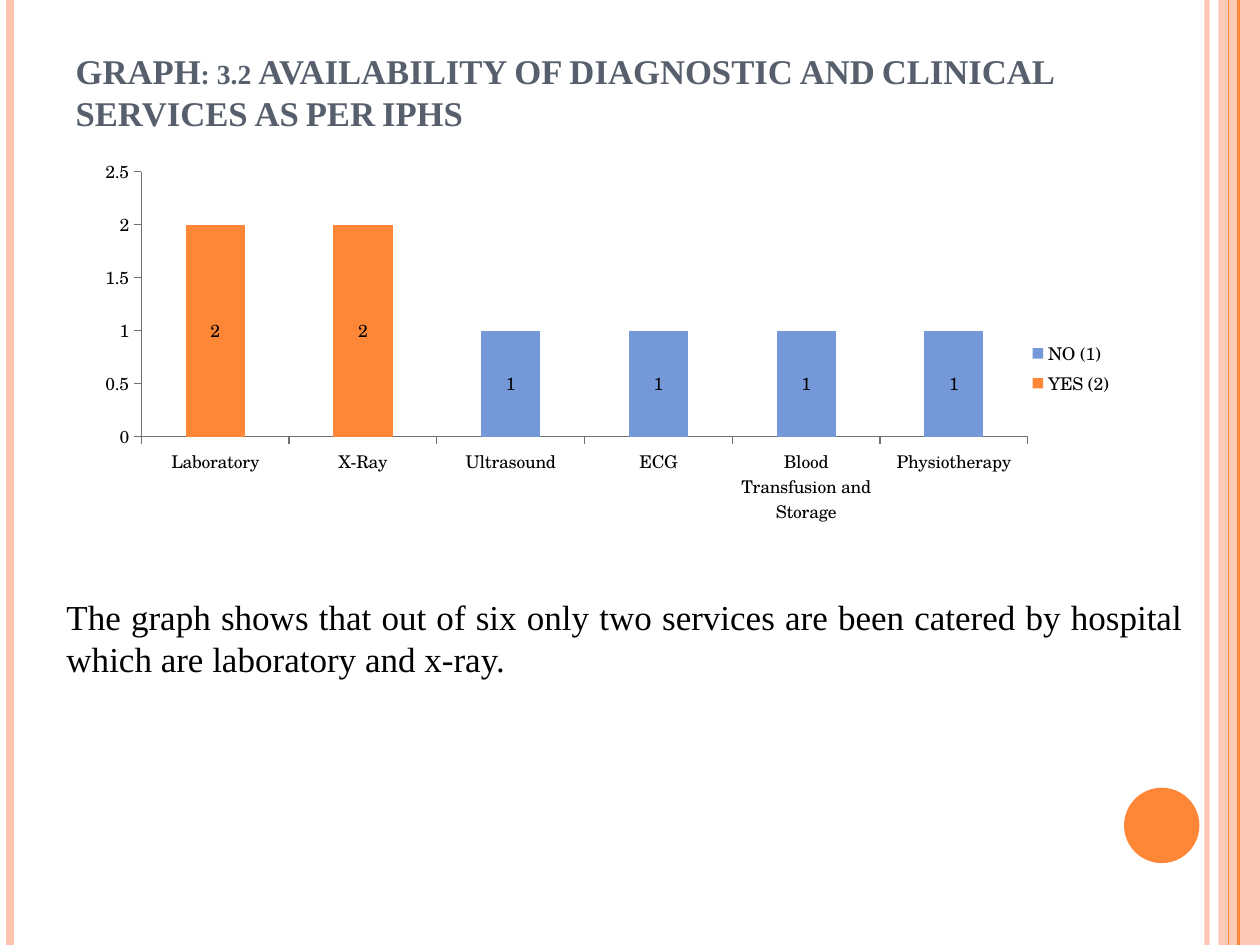
"""Build the slide on availability of diagnostic and clinical services."""
from dataclasses import dataclass

from lxml.etree import SubElement
from pptx import Presentation
from pptx.chart.data import CategoryChartData
from pptx.dml.color import RGBColor
from pptx.enum.chart import XL_CHART_TYPE, XL_LEGEND_POSITION, XL_TICK_MARK
from pptx.enum.shapes import MSO_CONNECTOR, MSO_SHAPE
from pptx.enum.text import MSO_ANCHOR, MSO_AUTO_SIZE, PP_ALIGN
from pptx.oxml import parse_xml
from pptx.oxml.ns import nsdecls, qn
from pptx.util import Cm, Pt

PEACH = RGBColor(0xFE, 0xC3, 0xAE)
ORANGE = RGBColor(0xFE, 0x86, 0x37)
BLUE = RGBColor(0x75, 0x98, 0xD9)
SLATE = RGBColor(0x57, 0x5F, 0x6D)
GREY = RGBColor(0x70, 0x70, 0x70)
BLACK = RGBColor(0, 0, 0)
SERIF = "Times New Roman"
WIDTH, HEIGHT = 25.4, 19.05


@dataclass
class Stripe:
    x: float
    color: RGBColor
    weight: float
    alpha: int = 100


@dataclass
class Block:
    kind: MSO_SHAPE
    box: tuple[float, float, float, float]
    color: RGBColor
    alpha: int = 100


@dataclass
class Answer:
    name: str
    values: tuple
    color: RGBColor


BLOCKS = [
    Block(MSO_SHAPE.RECTANGLE, (24.56, 0, 0.84, HEIGHT), PEACH, 87),
    Block(MSO_SHAPE.OVAL, (22.66, 15.88, 1.52, 1.52), ORANGE),
]
STRIPES = [
    Stripe(24.33, PEACH, 3, 93),
    Stripe(0.2, PEACH, 4.5),
    Stripe(24.97, ORANGE, 1.5),
    Stripe(24.77, ORANGE, 0.75),
]
SERVICES = ["Laboratory", "X-Ray", "Ultrasound", "ECG",
            "Blood Transfusion and Storage", "Physiotherapy"]
ANSWERS = [
    Answer("YES (2)", (2,) * 2 + (None,) * 4, ORANGE),
    Answer("NO (1)", (None,) * 2 + (1,) * 4, BLUE),
]


def assign(target, values: dict) -> None:
    for name, value in values.items():
        setattr(target, name, value)


def set_font(font, color: RGBColor, **values) -> None:
    assign(font, values)
    font.color.rgb = color


def set_alpha(element, percent: int) -> None:
    if percent < 100:
        color = next(element.iter(qn("a:srgbClr")))
        SubElement(color, qn("a:alpha"), val=str(percent * 1000))


def add_stripe(slide, stripe: Stripe) -> None:
    x = Cm(stripe.x)
    s = slide.shapes.add_connector(MSO_CONNECTOR.STRAIGHT, x, 0, x, Cm(HEIGHT))
    s.line.color.rgb = stripe.color
    s.line.width = Pt(stripe.weight)
    set_alpha(s._element.spPr, stripe.alpha)
    SubElement(s._element.spPr, qn("a:effectLst"))


def add_block(slide, block: Block) -> None:
    s = slide.shapes.add_shape(block.kind, *map(Cm, block.box))
    s.shadow.inherit = False
    s.fill.solid()
    s.fill.fore_color.rgb = block.color
    s.line.fill.background()
    set_alpha(s._element.spPr, block.alpha)


def fill_title(slide) -> None:
    s = slide.shapes.title
    assign(s, dict(left=Cm(1.27), top=Cm(0.76), width=Cm(20.75), height=Cm(2.06)))
    tf = s.text_frame
    assign(tf, dict(vertical_anchor=MSO_ANCHOR.BOTTOM, word_wrap=True,
                    auto_size=MSO_AUTO_SIZE.NONE))
    p = tf.paragraphs[0]
    p.alignment = PP_ALIGN.LEFT
    r = p.add_run()
    r.text = "GRAPH: 3.2 AVAILABILITY OF DIAGNOSTIC AND CLINICAL SERVICES AS PER IPHS"
    set_font(r.font, SLATE, name=SERIF, size=Pt(19.8), bold=True)
    r._r.get_or_add_rPr().set("cap", "small")


def add_summary(slide) -> None:
    s = slide.shapes.add_textbox(Cm(1.09), Cm(11.86), Cm(23.01), Cm(1.98))
    tf = s.text_frame
    assign(tf, dict(word_wrap=True, vertical_anchor=MSO_ANCHOR.MIDDLE))
    p = tf.paragraphs[0]
    p.alignment = PP_ALIGN.JUSTIFY
    r = p.add_run()
    r.text = ("The graph shows that out of six only two services are been catered "
              "by hospital which are laboratory and x-ray.")
    set_font(r.font, BLACK, name=SERIF, size=Pt(20))


def set_plot_layout(chart, **fractions: float) -> None:
    area = chart._chartSpace.chart.plotArea
    for old in area.findall(qn("c:layout")):
        area.remove(old)
    modes = '<c:xMode val="edge"/><c:yMode val="edge"/>'
    sizes = "".join(f'<c:{k} val="{v}"/>' for k, v in fractions.items())
    area.insert(0, parse_xml(
        f'<c:layout {nsdecls("c")}><c:manualLayout><c:layoutTarget val="inner"/>'
        f"{modes}{sizes}</c:manualLayout></c:layout>"))


def add_services_chart(slide) -> None:
    data = CategoryChartData()
    data.categories = SERVICES
    for answer in ANSWERS:
        data.add_series(answer.name, answer.values)
    chart = slide.shapes.add_chart(
        XL_CHART_TYPE.COLUMN_STACKED, Cm(0.89), Cm(3.12), Cm(21.79), Cm(8.61), data).chart
    assign(chart, dict(has_title=False, has_legend=True))
    set_font(chart.font, BLACK, name="TeX Gyre Schola", size=Pt(10))
    assign(chart.legend, dict(position=XL_LEGEND_POSITION.RIGHT, include_in_layout=False))
    plot = chart.plots[0]
    assign(plot, dict(gap_width=150, overlap=100, vary_by_categories=False))
    for series, answer in zip(plot.series, ANSWERS):
        series.format.fill.solid()
        series.format.fill.fore_color.rgb = answer.color
        series.data_labels.show_value = True
    for axis in (chart.category_axis, chart.value_axis):
        assign(axis, dict(has_major_gridlines=False, major_tick_mark=XL_TICK_MARK.OUTSIDE))
        axis.format.line.color.rgb = GREY
    assign(chart.value_axis, dict(minimum_scale=0, maximum_scale=2.5, major_unit=0.5))
    set_plot_layout(chart, x=0.09, y=0.04, w=0.82, h=0.62)


def main() -> None:
    prs = Presentation()
    assign(prs, dict(slide_width=Cm(WIDTH), slide_height=Cm(HEIGHT)))
    slide = prs.slides.add_slide(prs.slide_layouts[5])
    for block in BLOCKS:
        add_block(slide, block)
    for stripe in STRIPES:
        add_stripe(slide, stripe)
    fill_title(slide)
    add_services_chart(slide)
    add_summary(slide)
    prs.save("out.pptx")


if __name__ == "__main__":
    main()
